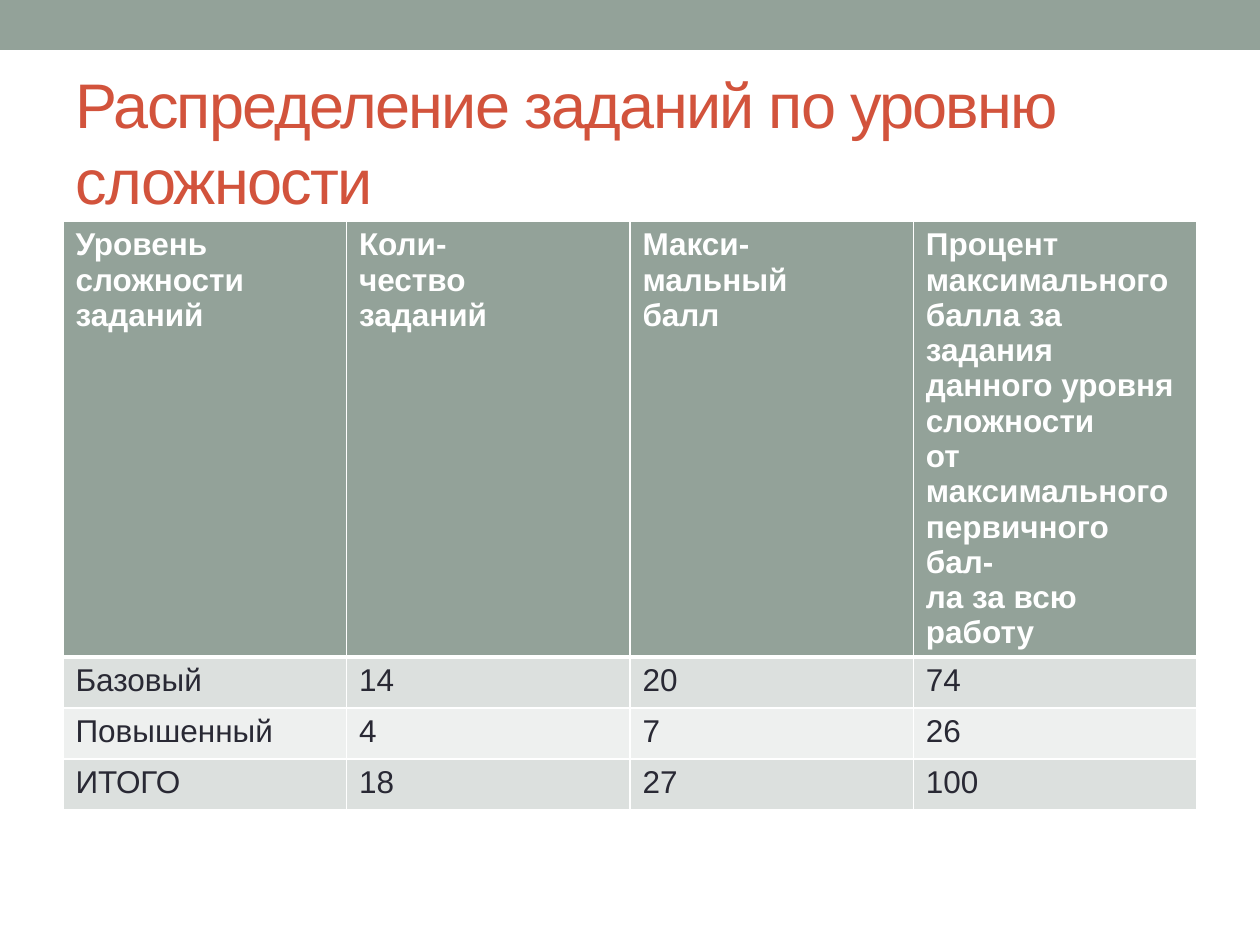
"""Build a slide with a table of tasks by level of difficulty."""
from lxml import etree
from pptx import Presentation
from pptx.dml.color import RGBColor
from pptx.enum.shapes import MSO_SHAPE
from pptx.enum.text import MSO_ANCHOR, MSO_AUTO_SIZE, PP_ALIGN
from pptx.oxml.ns import qn
from pptx.util import Emu, Pt

RECT = MSO_SHAPE.RECTANGLE
MIDDLE = MSO_ANCHOR.MIDDLE
NO_FIT = MSO_AUTO_SIZE.NONE
LEFT = PP_ALIGN.LEFT
SCALE = 914400 // 126
COLORS = {
    "sage": "93A299",
    "rust": "D2533C",
    "ink": "292934",
    "white": "FFFFFF",
    "dark": "DCE0DE",
    "light": "EEF0EF",
}
HEAD = [
    "Уровень\nсложности\nзаданий",
    "Коли-\nчество\nзаданий",
    "Макси-\nмальный\nбалл",
    "Процент максимального балла за\nзадания данного уровня сложности\n"
    "от максимального первичного бал-\nла за всю работу",
]
ROWS = [
    ["Базовый", "14", "20", "74"],
    ["Повышенный", "4", "7", "26"],
    ["ИТОГО", "18", "27", "100"],
]


def px(*nums):
    return [Emu(num * SCALE) for num in nums]


def rgb(name):
    return RGBColor.from_string(COLORS[name])


class Deck:
    """Hold the style and the current slide."""

    def __init__(self, wide, high, face):
        self.prs = Presentation()
        self.prs.slide_width, self.prs.slide_height = px(wide, high)
        self.face = face
        self.slide = self.prs.slides.add_slide(self.prs.slide_layouts[5])

    def style(self, para, size, color, bold=False):
        para.alignment = LEFT
        font = para.font
        font.name, font.size, font.bold = self.face, Pt(size), bold
        font.color.rgb = rgb(color)

    def band(self, box, color):
        shape = self.slide.shapes.add_shape(RECT, *px(*box))
        shape.shadow.inherit = False
        shape.fill.solid()
        shape.fill.fore_color.rgb = rgb(color)
        shape.line.fill.background()

    def title(self, box, text, size, color):
        shape = self.slide.shapes.title
        shape.left, shape.top, shape.width, shape.height = px(*box)
        frame = shape.text_frame
        frame.text = text
        frame.word_wrap = True
        frame.auto_size = NO_FIT
        frame.vertical_anchor = MIDDLE
        para = frame.paragraphs[0]
        self.style(para, size, color)
        para.runs[0].font._element.set("spc", "-100")

    def edge(self, cell, side, width, color):
        props = cell._tc.get_or_add_tcPr()
        line = etree.SubElement(props, qn(f"a:{side}"), w=str(Pt(width)))
        fill = etree.SubElement(line, qn("a:solidFill"))
        etree.SubElement(fill, qn("a:srgbClr"), val=COLORS[color])

    def cell(self, cell, text, size, row):
        head = row == 0
        for side in ("lnL", "lnR", "lnT", "lnB"):
            thick = (head and side == "lnB") or (row == 1 and side == "lnT")
            self.edge(cell, side, 3 if thick else 1, "white")
        cell.fill.solid()
        shade = "sage" if head else "dark" if row % 2 else "light"
        cell.fill.fore_color.rgb = rgb(shade)
        cell.text = text
        for para in cell.text_frame.paragraphs:
            self.style(para, size, "white" if head else "ink", head)

    def table(self, box, rows, size, step):
        shape = self.slide.shapes.add_table(len(rows), len(rows[0]), *px(*box))
        grid = shape.table
        for row, texts in enumerate(rows):
            high = step if row else box[3] - step * (len(rows) - 1)
            grid.rows[row].height = px(high)[0]
            for col, text in enumerate(texts):
                self.cell(grid.cell(row, col), text, size, row)

    def save(self):
        self.prs.save("out.pptx")


def main():
    deck = Deck(1260, 945, "Arial")
    deck.band((0, 0, 1260, 50), "sage")
    deck.title((63, 73, 1134, 136), "Распределение заданий по уровню сложности", 36, "rust")
    deck.table((63, 221, 1134, 588), [HEAD] + ROWS, 18, 51)
    deck.save()


if __name__ == "__main__":
    main()
